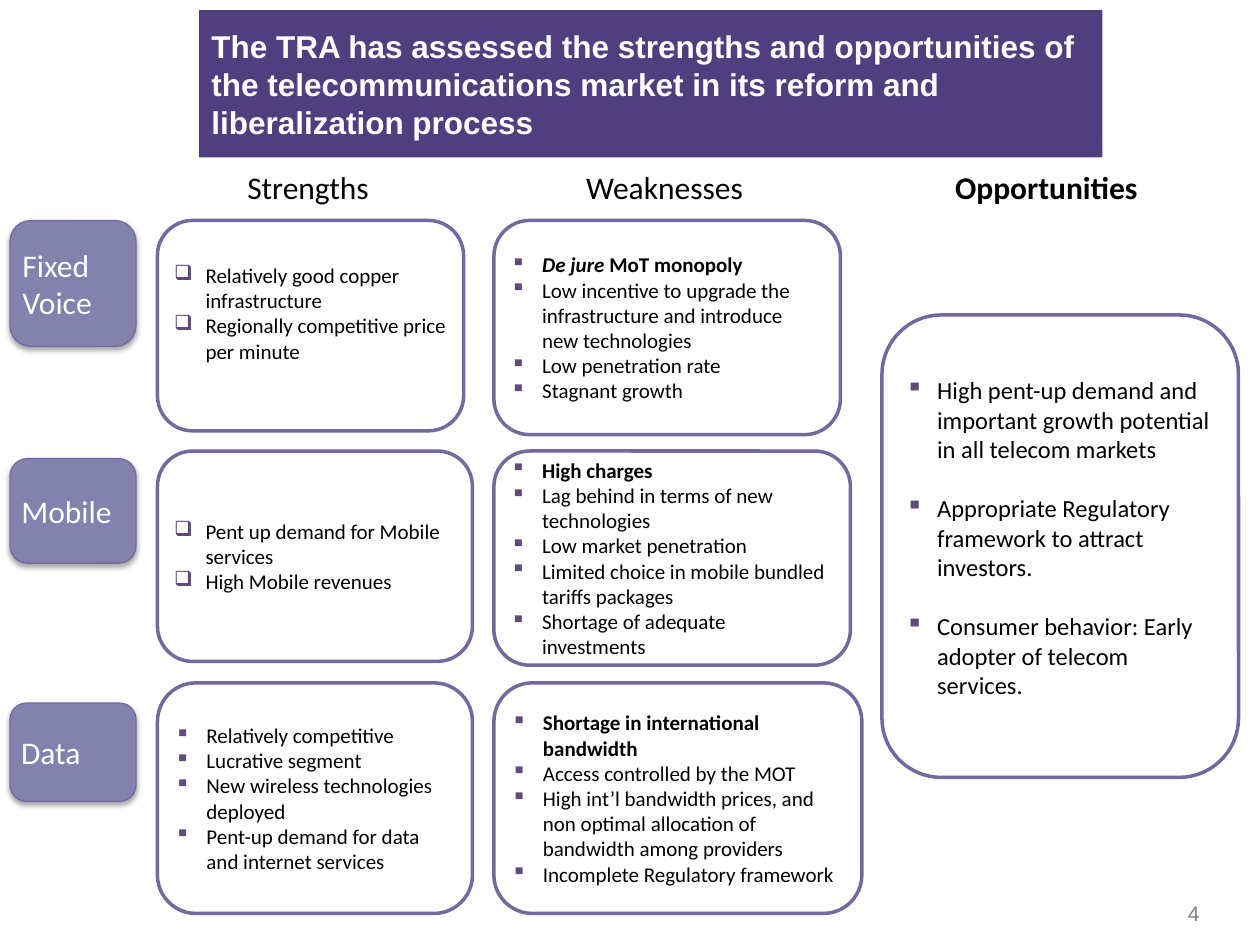
from lxml import etree
from pptx import Presentation
from pptx.dml.color import RGBColor
from pptx.enum.shapes import MSO_SHAPE
from pptx.enum.text import MSO_ANCHOR, PP_ALIGN
from pptx.oxml.ns import qn
from pptx.util import Inches, Pt

ROUND, RECT = MSO_SHAPE.ROUNDED_RECTANGLE, MSO_SHAPE.RECTANGLE
MIDDLE, TOP = MSO_ANCHOR.MIDDLE, MSO_ANCHOR.TOP
LEFT, CENTER = PP_ALIGN.LEFT, PP_ALIGN.CENTER
WHITE = RGBColor(0xFF, 0xFF, 0xFF)
BLACK = RGBColor(0, 0, 0)
GRAY = RGBColor(0x80, 0x80, 0x80)
DEEP = RGBColor(0x4F, 0x3F, 0x7E)
LILAC = RGBColor(0x83, 0x81, 0xAD)
EDGE = RGBColor(0x75, 0x68, 0x9F)
MARK = RGBColor(0x60, 0x4A, 0x7B)

BODY = {"name": "Calibri", "size": Pt(12)}
LARGE = {"name": "Calibri", "size": Pt(14)}
HEAD = {"name": "Calibri", "size": Pt(18)}
TITLE = {"name": "Arial", "size": Pt(18), "bold": True}
NUMBER = {"name": "Arial", "size": Pt(12)}
BOLD = {"bold": True}
SLANT = {"bold": True, "italic": True}

prs = Presentation()
prs.slide_width, prs.slide_height = Inches(10), Inches(7.5)
slide = prs.slides.add_slide(prs.slide_layouts[6])


def add_box(kind, at, fill=None, line=0):
    place = [Inches(v) for v in at]
    if kind is None:
        return slide.shapes.add_textbox(*place)
    box = slide.shapes.add_shape(kind, *place)
    box.shadow.inherit = False
    box.fill.solid()
    box.fill.fore_color.rgb = fill
    if line:
        box.line.color.rgb = EDGE
        box.line.width = Pt(line)
    else:
        box.line.fill.background()
    return box


def write(box, items, style, color, mark="", gap=0, align=LEFT, anchor=MIDDLE, pad=None, foot=0):
    frame = box.text_frame
    frame.word_wrap = True
    frame.vertical_anchor = anchor
    if pad is not None:
        frame.margin_left = frame.margin_right = frame.margin_top = Inches(pad)
        frame.margin_bottom = Inches(pad + foot)
    for n, item in enumerate(items):
        para = frame.add_paragraph() if n else frame.paragraphs[0]
        para.alignment = align
        if mark:
            props = para._p.get_or_add_pPr()
            props.set("marL", str(Inches(0.25)))
            props.set("indent", str(-Inches(0.25)))
            tint = etree.SubElement(props, qn("a:buClr"))
            etree.SubElement(tint, qn("a:srgbClr"), val=str(MARK))
            etree.SubElement(props, qn("a:buChar"), char=mark)
        if gap and n:
            para.space_before = Pt(gap)
        for text, extra in [(item, {})] if isinstance(item, str) else item:
            run = para.add_run()
            run.text = text
            run.font.color.rgb = color
            for key, value in {**style, **extra}.items():
                setattr(run.font, key, value)


banner = add_box(RECT, (1.58, 0.08, 7.17, 1.17), DEEP)
write(banner, ["The TRA has assessed the strengths and opportunities of the telecommunications "
               "market in its reform and liberalization process"], TITLE, WHITE)

for left, name, extra in [
    (0.92, "Strengths", {}),
    (3.75, "Weaknesses", {}),
    (6.78, "Opportunities", BOLD),
]:
    write(add_box(None, (left, 1.33, 3.05, 0.31)), [[(name, extra)]], HEAD, BLACK, align=CENTER)

for top, high, name in [(1.75, 1, "Fixed Voice"), (3.64, 0.83, "Mobile"), (5.58, 0.78, "Data")]:
    label = add_box(ROUND, (0.08, top, 1, high), LILAC, 0.75)
    effects = label._element.spPr.find(qn("a:effectLst"))
    shade = etree.SubElement(effects, qn("a:outerShdw"), blurRad=str(Pt(3.1)),
                             dist=str(Pt(1.8)), dir="5400000", rotWithShape="0")
    tint = etree.SubElement(shade, qn("a:srgbClr"), val=str(BLACK))
    etree.SubElement(tint, qn("a:alpha"), val="35000")
    write(label, [name], HEAD, WHITE, pad=0.05)

for at, mark, foot, items in [
    ((1.25, 1.75, 2.43, 1.67), "❑", 0.2, [
        "Relatively good copper infrastructure",
        "Regionally competitive price per minute",
    ]),
    ((3.92, 1.75, 2.75, 1.7), "▪", 0, [
        [("De jure ", SLANT), ("MoT monopoly", BOLD)],
        "Low incentive to upgrade the infrastructure and introduce new technologies",
        "Low penetration rate",
        "Stagnant growth",
    ]),
    ((1.25, 3.58, 2.5, 1.67), "❑", 0, [
        "Pent up demand for Mobile services",
        "High Mobile revenues",
    ]),
    ((3.92, 3.58, 2.83, 1.7), "▪", 0, [
        [("High charges", BOLD)],
        "Lag behind in terms of new technologies",
        "Low market penetration",
        "Limited choice in mobile bundled tariffs packages",
        "Shortage of adequate investments",
    ]),
    ((1.25, 5.42, 2.5, 1.83), "▪", 0, [
        "Relatively competitive",
        "Lucrative segment",
        "New wireless technologies deployed",
        "Pent-up demand for data and internet services",
    ]),
    ((3.92, 5.42, 2.92, 1.83), "▪", 0, [
        [("Shortage in international bandwidth", BOLD)],
        "Access controlled by the MOT",
        "High int’l bandwidth prices, and non optimal allocation of bandwidth among providers",
        "Incomplete Regulatory framework",
    ]),
]:
    write(add_box(ROUND, at, WHITE, 2), items, BODY, BLACK, mark, pad=0.05, foot=foot)

chances = add_box(ROUND, (7, 2.5, 2.83, 3.67), WHITE, 2)
write(chances, [
    "High pent-up demand and important growth potential in all telecom markets",
    "Appropriate Regulatory framework to attract investors.",
    "Consumer behavior: Early adopter of telecom services.",
], LARGE, BLACK, "▪", gap=17, pad=0.05, foot=0.14)

write(add_box(None, (9.33, 7.1, 0.41, 0.3)), ["4"], NUMBER, GRAY, anchor=TOP)

prs.save("out.pptx")
